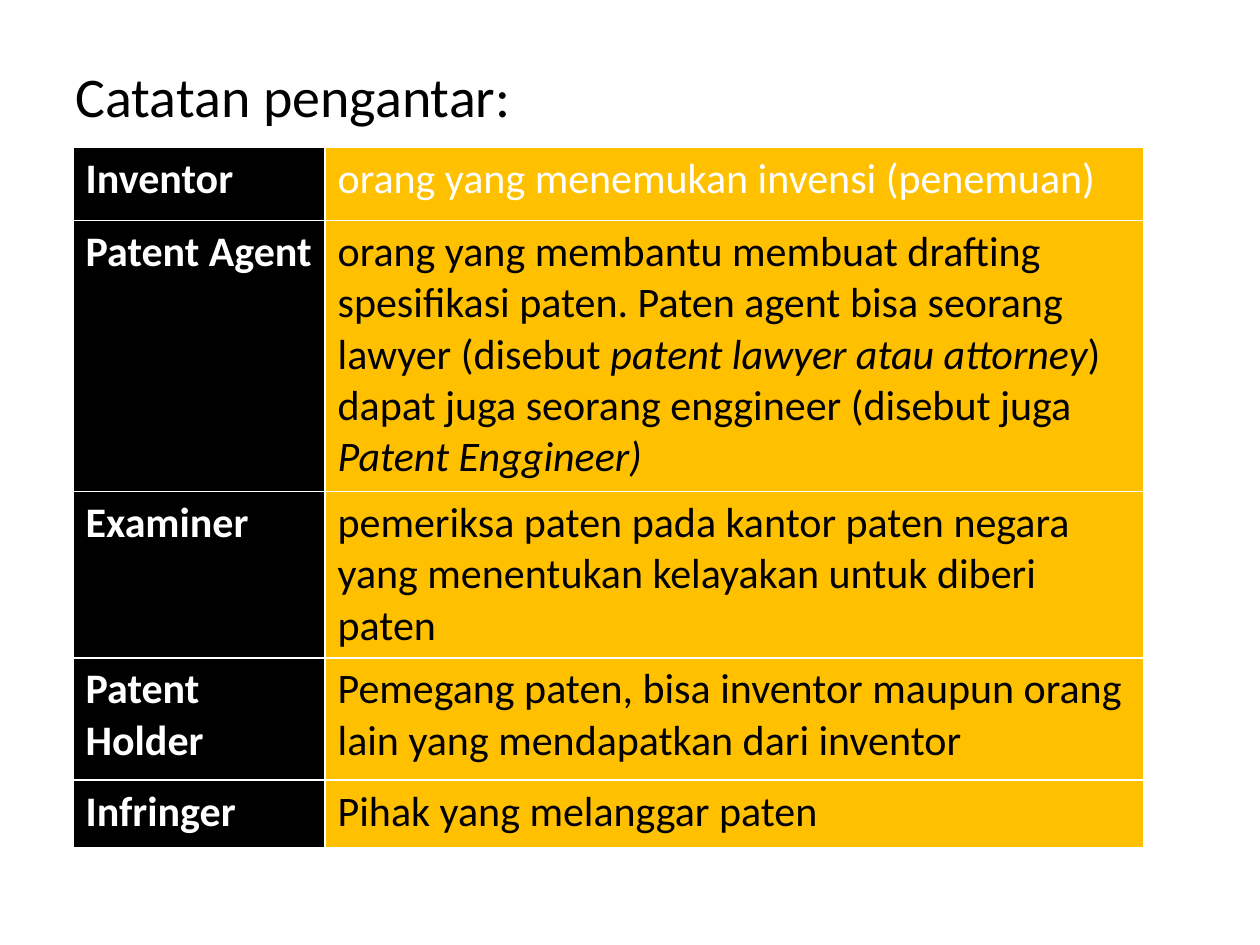
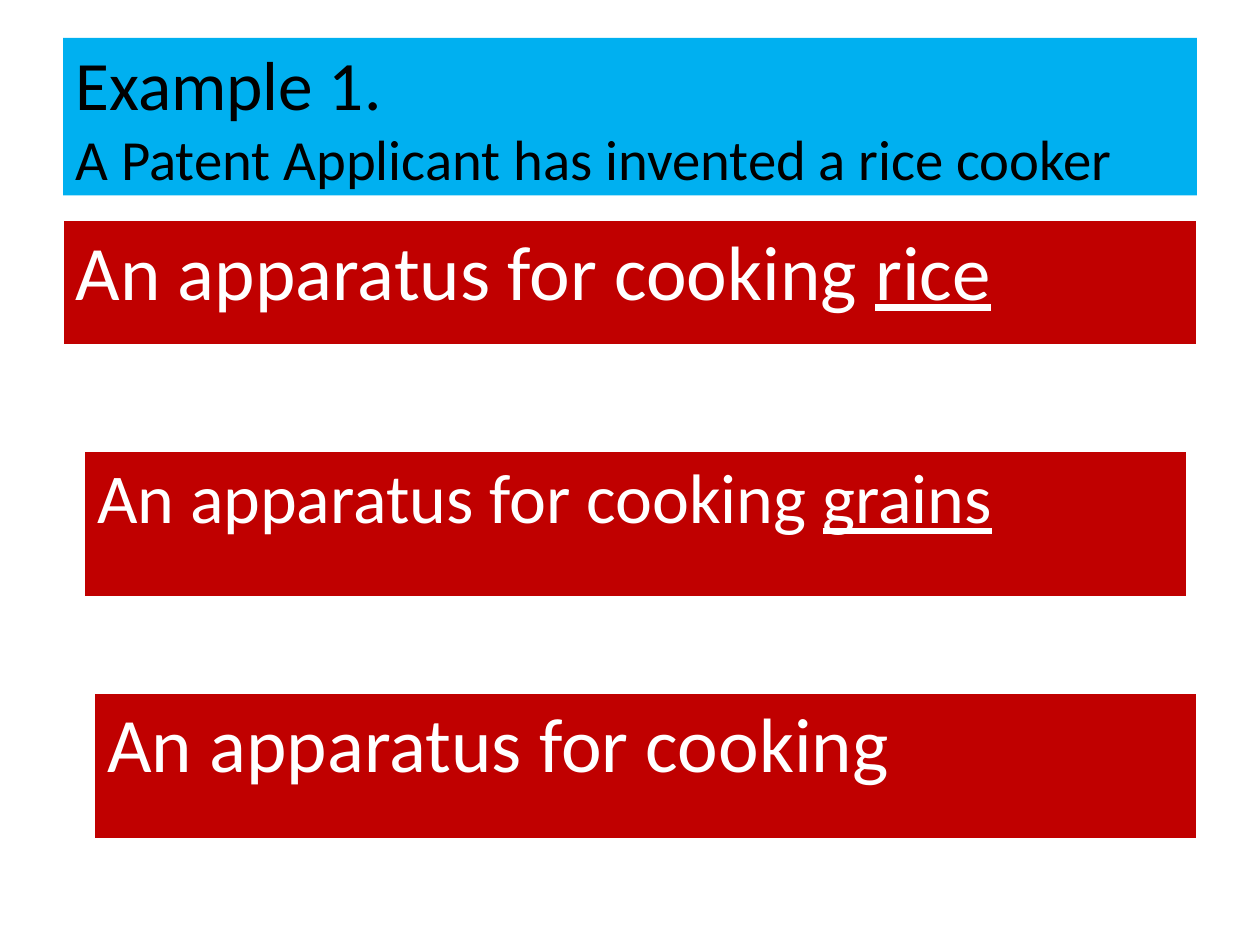
"""Build two slides on patent terms and on widening a claim."""
from lxml import etree
from pptx import Presentation
from pptx.dml.color import RGBColor
from pptx.enum.text import MSO_ANCHOR, MSO_AUTO_SIZE, PP_ALIGN
from pptx.oxml.ns import qn
from pptx.util import Inches, Pt

LEFT = PP_ALIGN.LEFT
TOP, MIDDLE = MSO_ANCHOR.TOP, MSO_ANCHOR.MIDDLE
NO_FIT = MSO_AUTO_SIZE.NONE
TITLE_ONLY = 5
FONT = "Calibri"
COLORS = {"black": "000000", "white": "FFFFFF", "gold": "FFC000",
          "blue": "00B0F0", "red": "C00000"}

TERMS = [
    ("Inventor", 0.58, [("orang yang menemukan invensi (penemuan)", "")]),
    ("Patent Agent", 2.15, [
        ("orang yang membantu membuat drafting spesifikasi paten. "
         "Paten agent bisa seorang lawyer (disebut ", ""),
        ("patent lawyer atau attorney", "i"),
        (") dapat juga seorang enggineer (disebut juga ", ""),
        ("Patent Enggineer)", "i")]),
    ("Examiner", 1.32, [
        ("pemeriksa paten pada kantor paten negara yang menentukan "
         "kelayakan untuk diberi paten", "")]),
    ("Patent Holder", 0.97, [
        ("Pemegang paten, bisa inventor maupun orang lain yang "
         "mendapatkan dari inventor", "")]),
    ("Infringer", 0.54, [("Pihak yang melanggar paten", "")]),
]

CLAIMS = [
    ((0.5, 1.75, 9, 1), 44,
     [("An apparatus for cooking ", ""), ("rice", "u")]),
    ((0.67, 3.58, 8.75, 1.17), 40,
     [("An apparatus for cooking ", ""), ("grains", "u")]),
    ((0.75, 5.5, 8.75, 1.17), 44, [("An apparatus for cooking", "")]),
]


def paint(fill, color):
    fill.solid()
    fill.fore_color.rgb = RGBColor.from_string(COLORS[color])


def add_run(para, text, size, color, style=""):
    run = para.add_run()
    run.text = text
    font = run.font
    font.name, font.size = FONT, Pt(size)
    font.color.rgb = RGBColor.from_string(COLORS[color])
    font.bold, font.italic = "b" in style, "i" in style
    font.underline = "u" in style


def set_title(slide, box, anchor, lines, fill=None):
    title = slide.shapes.title
    title.left, title.top, title.width, title.height = map(Inches, box)
    if fill:
        paint(title.fill, fill)
    frame = title.text_frame
    frame.word_wrap, frame.auto_size = True, NO_FIT
    frame.vertical_anchor = anchor
    para = frame.paragraphs[0]
    para.alignment = LEFT
    for i, (text, size) in enumerate(lines):
        if i:
            para.add_line_break()
        add_run(para, text, size, "black")


def add_grid(slide, box, widths, heights):
    shape = slide.shapes.add_table(len(heights), len(widths),
                                   *map(Inches, box))
    table = shape.table
    table.first_row = table.horz_banding = False
    for col, width in zip(table.columns, widths):
        col.width = Inches(width)
    for row, height in zip(table.rows, heights):
        row.height = Inches(height)
    return table


def edge_cell(cell, bottom):
    props = cell._tc.get_or_add_tcPr()
    for side in "LRTB":
        width = bottom if side == "B" else 1
        line = etree.SubElement(props, qn("a:ln" + side), w=str(Pt(width)))
        fill = etree.SubElement(line, qn("a:solidFill"))
        etree.SubElement(fill, qn("a:srgbClr"), val=COLORS["white"])


def fill_cell(cell, runs, size, color, fill, bottom=1):
    edge_cell(cell, bottom)
    paint(cell.fill, fill)
    para = cell.text_frame.paragraphs[0]
    for text, style in runs:
        add_run(para, text, size, color, style)


def add_terms(slide):
    heights = [height for _, height, _ in TERMS]
    table = add_grid(slide, (0.58, 1.17, 8.5, sum(heights)),
                     (2, 6.5), heights)
    for i, (term, _, runs) in enumerate(TERMS):
        fill_cell(table.cell(i, 0), [(term, "b")], 24, "white", "black")
        color = "black" if i else "white"
        fill_cell(table.cell(i, 1), runs, 24, color, "gold")


def add_claim(slide, box, size, runs):
    table = add_grid(slide, box, box[2:3], box[3:])
    fill_cell(table.cell(0, 0), runs, size, "white", "red", 3)


def main():
    deck = Presentation()
    deck.slide_width, deck.slide_height = Inches(10), Inches(7.5)
    layout = deck.slide_layouts[TITLE_ONLY]

    slide = deck.slides.add_slide(layout)
    set_title(slide, (0.5, 0.44, 9, 0.7), TOP, [("Catatan pengantar:", 32)])
    add_terms(slide)

    slide = deck.slides.add_slide(layout)
    set_title(slide, (0.5, 0.3, 9, 1.25), MIDDLE,
              [("Example 1. ", 39.6),
               ("A Patent Applicant has invented a rice cooker", 32.4)],
              "blue")
    for box, size, runs in CLAIMS:
        add_claim(slide, box, size, runs)

    deck.save("out.pptx")


if __name__ == "__main__":
    main()
